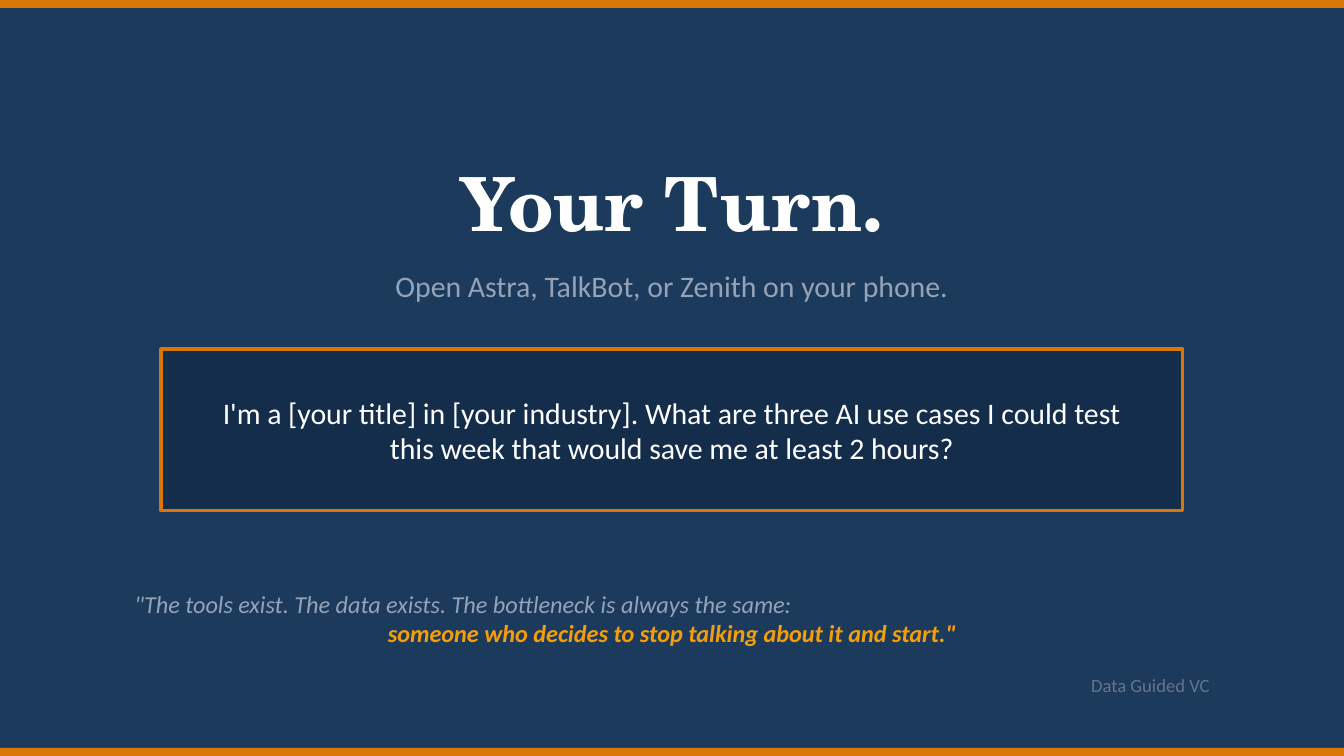
from pptx import Presentation
from pptx.dml.color import RGBColor
from pptx.enum.shapes import MSO_SHAPE
from pptx.enum.text import MSO_ANCHOR, MSO_AUTO_SIZE, PP_ALIGN
from pptx.util import Pt

RECT = MSO_SHAPE.RECTANGLE
MIDDLE = MSO_ANCHOR.MIDDLE
FIXED = MSO_AUTO_SIZE.NONE
LEFT, CENTER, RIGHT = PP_ALIGN.LEFT, PP_ALIGN.CENTER, PP_ALIGN.RIGHT

# Content
TITLE = "Your Turn."
HINT = "Open Astra, TalkBot, or Zenith on your phone."
PROMPT = ("I'm a [your title] in [your industry]. What are three AI use cases "
          "I could test this week that would save me at least 2 hours?")
QUOTE = [
    ('"The tools exist. The data exists. The bottleneck is always the same:',
     dict(color="muted", align=LEFT)),
    ('someone who decides to stop talking about it and start."',
     dict(color="gold", bold=True)),
]
FOOTER = "Data Guided VC"

COLORS = {
    "navy": "1B3A5C", "deep": "142D4A", "orange": "D97706", "gold": "F59E0B",
    "white": "FFFFFF", "muted": "94A3B8", "slate": "64748B",
}

# Geometry in points
WIDE, HIGH = 720, 405
BAR = 4.32
EDGE = 43.2


def paint(name):
    return RGBColor.from_string(COLORS[name])


def place(shape, left, top, width, height):
    shape.left, shape.top = Pt(left), Pt(top)
    shape.width, shape.height = Pt(width), Pt(height)


def write(text, box, holder=None, **look):
    """Set text, a string or (string, format) pairs, in a holder or new box."""
    shape = holder or slide.shapes.add_textbox(0, 0, 0, 0)
    place(shape, *box)
    frame = shape.text_frame
    frame.word_wrap = True
    frame.auto_size = FIXED
    frame.vertical_anchor = MIDDLE
    frame.margin_left = frame.margin_right = 0
    frame.margin_top = frame.margin_bottom = 0
    lines = [(text, {})] if isinstance(text, str) else text
    for i, (line, extra) in enumerate(lines):
        style = {**look, **extra}
        para = frame.add_paragraph() if i else frame.paragraphs[0]
        para.alignment = style.get("align", CENTER)
        para.space_before = Pt(0)
        run = para.add_run()
        run.text = line
        font = run.font
        font.name = style.get("face", "Calibri")
        font.size = Pt(style["size"])
        font.bold = style.get("bold", False)
        font.italic = style.get("italic", False)
        font.color.rgb = paint(style["color"])


def panel(box, fill, line=None):
    shape = slide.shapes.add_shape(RECT, 0, 0, 0, 0)
    place(shape, *box)
    shape.shadow.inherit = False
    shape.fill.solid()
    shape.fill.fore_color.rgb = paint(fill)
    if line:
        shape.line.color.rgb = paint(line)
        shape.line.width = Pt(2)
    else:
        shape.line.fill.background()


deck = Presentation()
deck.slide_width, deck.slide_height = Pt(WIDE), Pt(HIGH)
slide = deck.slides.add_slide(deck.slide_layouts[0])
slide.background.fill.solid()
slide.background.fill.fore_color.rgb = paint("navy")

# Top and bottom bars
for top in (0, HIGH - BAR):
    panel((0, top, WIDE, BAR), "orange")

# Heading
span = WIDE - 2 * EDGE
write(TITLE, (EDGE, 79.2, span, 57.6), slide.shapes.title,
      size=40, face="TeX Gyre Schola", color="white", bold=True)
write(HINT, (EDGE, 136.8, span, 32.4), slide.placeholders[1],
      size=16, color="muted")

# Prompt card
panel((86.4, 187.2, WIDE - 2 * 86.4, 86.4), "deep", "orange")
write(PROMPT, (108, 190.8, WIDE - 2 * 108, 79.2), size=16, color="white")

# Closing quote and footer
write(QUOTE, (72, 302.4, WIDE - 2 * 72, 57.6), size=13, italic=True)
write(FOOTER, (432, 356.4, 216, 21.6), size=10, color="slate", align=RIGHT)

deck.save("out.pptx")
